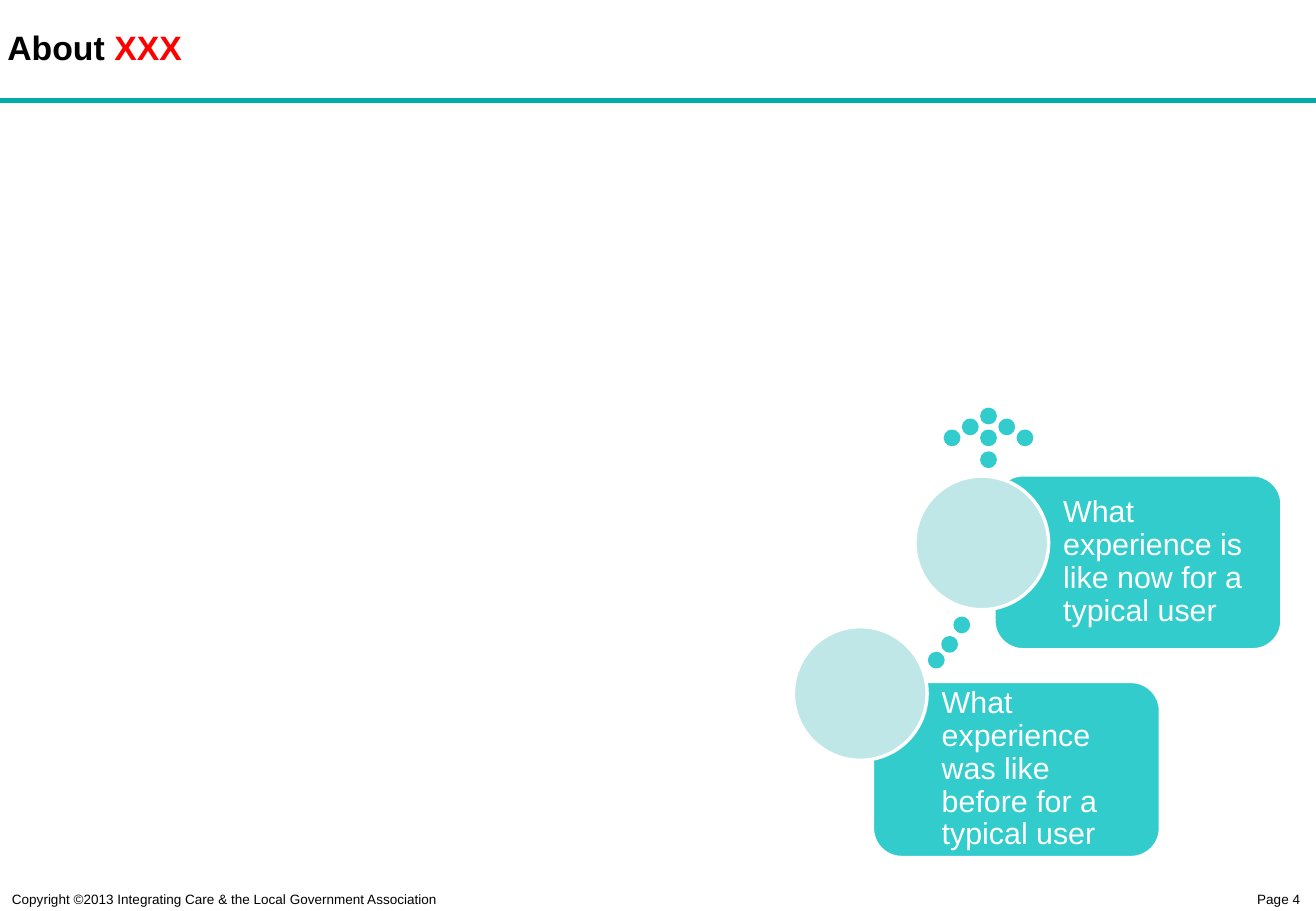
import pptx
import pptx.dml.color
import pptx.enum.shapes
import pptx.enum.text
import pptx.oxml.ns
import pptx.util
from lxml import etree

PX = 9144  # one px is a hundredth of an inch
PAGE_WIDTH, PAGE_HEIGHT = 1083, 750
FONT = "Arial"
TEAL, PALE_TEAL, RULE_TEAL = "33CCCC", "BFE7E7", "00A9AA"
WHITE, BLACK, RED = "FFFFFF", "000000", "FF0000"

SHAPES = pptx.enum.shapes.MSO_SHAPE
ALIGN = pptx.enum.text.PP_ALIGN
MIDDLE = pptx.enum.text.MSO_ANCHOR.MIDDLE

DOT = 11
ARROW_TIP = (808, 337)
TRAIL = [(786, 509), (776, 525), (765, 538)]
# card left, top, height; circle left, top; text
STAGES = [
    ((718, 561, 145), (653, 516),
     "What experience was like before for a typical user"),
    ((818, 391, 144), (753, 392),
     "What experience is like now for a typical user"),
]


def emu(*lengths):
    return [length * PX for length in lengths]


def rgb(value):
    return pptx.dml.color.RGBColor.from_string(value)


def style_span(span, size, color, bold=False):
    span.font.name = FONT
    span.font.size = pptx.util.Pt(size)
    span.font.bold = bold
    span.font.color.rgb = rgb(color)


def set_margins(frame, left, top, right, bottom):
    (frame.margin_left, frame.margin_top,
     frame.margin_right, frame.margin_bottom) = emu(left, top, right, bottom)


def add_filled(page, kind, bounds, fill, line):
    shape = page.shapes.add_shape(kind, *emu(*bounds))
    shape.shadow.inherit = False
    shape.fill.solid()
    shape.fill.fore_color.rgb = rgb(fill)
    shape.line.color.rgb = rgb(line)
    shape.line.width = pptx.util.Pt(2)
    return shape


def add_dot(page, left, top):
    add_filled(page, SHAPES.OVAL, (left, top, DOT, DOT), TEAL, TEAL)


def add_stage(page, card, circle, text):
    left, top, height = card
    box = add_filled(page, SHAPES.ROUNDED_RECTANGLE,
                     (left, top, 237, height), TEAL, WHITE)
    frame = box.text_frame
    frame.word_wrap = True
    frame.vertical_anchor = MIDDLE
    set_margins(frame, 50, 7, 7, 7)
    frame.text = text
    para = frame.paragraphs[0]
    para.alignment = ALIGN.LEFT
    para.line_spacing = 0.9
    style_span(para.runs[0], 18, WHITE)
    add_filled(page, SHAPES.OVAL, (*circle, 110, 110), PALE_TEAL, WHITE)


def add_footer(page, left, width, text, alignment):
    box = page.shapes.add_textbox(*emu(left, 722, width, 28))
    frame = box.text_frame
    frame.word_wrap = True
    set_margins(frame, 10, 5, 13, 5)
    frame.text = text
    para = frame.paragraphs[0]
    para.alignment = alignment
    para.line_spacing = 1.5
    style_span(para.runs[0], 8, BLACK)


def add_rule(page):
    rule = page.shapes.add_connector(
        pptx.enum.shapes.MSO_CONNECTOR.STRAIGHT, *emu(0, 83, PAGE_WIDTH, 83))
    rule.line.color.rgb = rgb(RULE_TEAL)
    rule.line.width = pptx.util.Pt(3)
    etree.SubElement(rule._element.spPr, pptx.oxml.ns.qn("a:effectLst"))


def set_title(page):
    title = page.shapes.title
    title.left, title.top, title.width, title.height = emu(-2, 1, 756, 76)
    frame = title.text_frame
    frame.auto_size = pptx.enum.text.MSO_AUTO_SIZE.NONE
    frame.vertical_anchor = MIDDLE
    set_margins(frame, 8, 8, 8, 8)
    para = frame.paragraphs[0]
    para.alignment = ALIGN.LEFT
    for text, color in (("About ", BLACK), ("XXX", RED)):
        span = para.add_run()
        span.text = text
        style_span(span, 20, color, bold=True)


def main():
    deck = pptx.Presentation()
    deck.slide_width, deck.slide_height = emu(PAGE_WIDTH, PAGE_HEIGHT)
    page = deck.slides.add_slide(deck.slide_layouts[5])

    # Header and footer
    set_title(page)
    add_rule(page)
    add_footer(page, 0, 374, "Copyright ©2013 Integrating Care & the Local "
               "Government Association", ALIGN.LEFT)
    add_footer(page, 896, 187, "Page 4", ALIGN.RIGHT)

    # Dotted trail between the circles
    for left, top in TRAIL:
        add_dot(page, left, top)

    # Dotted arrow: head, then stem
    tip_left, tip_top = ARROW_TIP
    for step in range(-2, 3):
        add_dot(page, tip_left + 15 * step, tip_top + 9 * abs(step))
    for step in (1, 2):
        add_dot(page, tip_left, tip_top + 18 * step)

    # Experience cards with their circles
    for card, circle, text in STAGES:
        add_stage(page, card, circle, text)

    deck.save("out.pptx")


if __name__ == "__main__":
    main()
